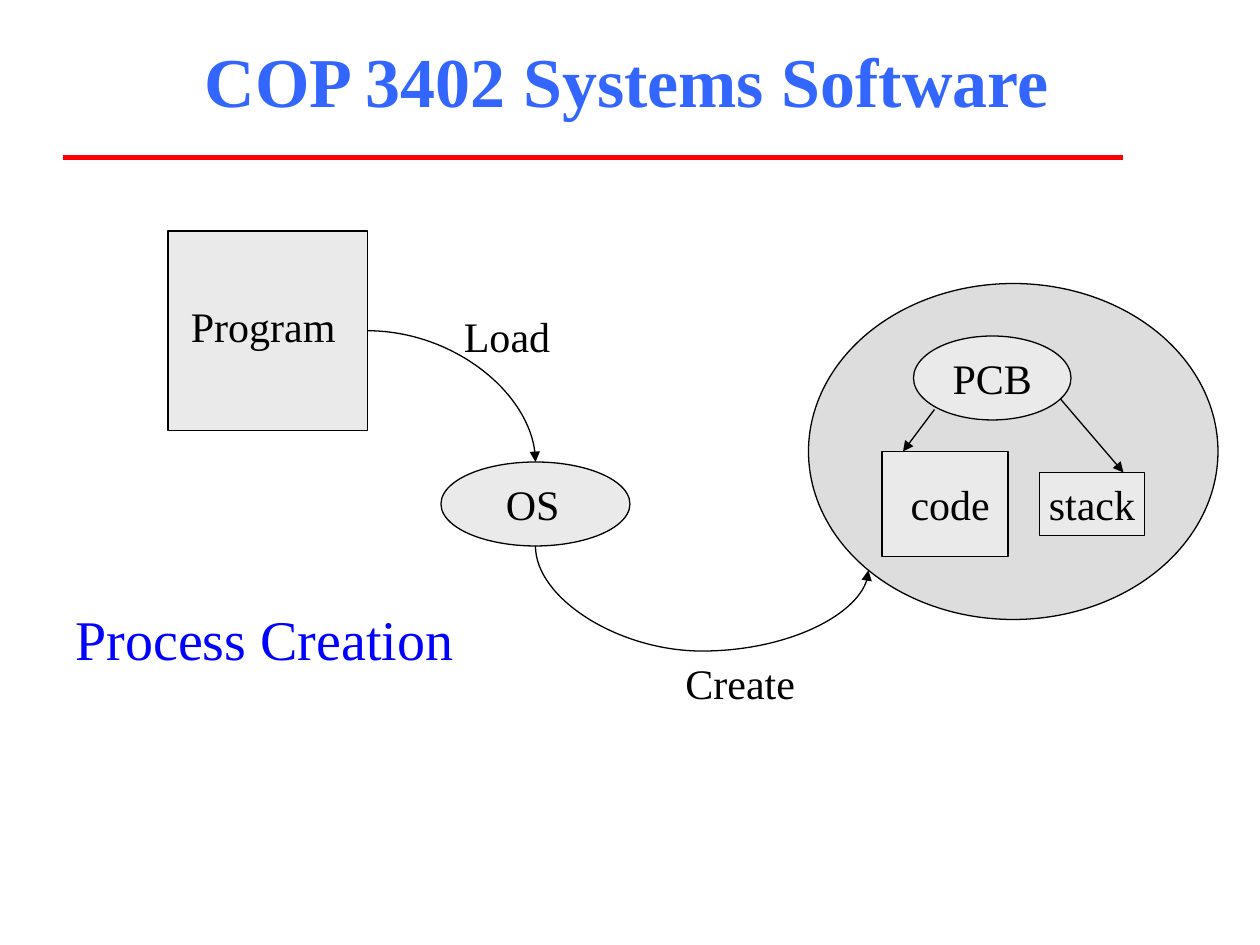
from pptx import Presentation
from pptx.dml.color import RGBColor
from pptx.enum.shapes import MSO_CONNECTOR as Link, MSO_SHAPE as Kind
from pptx.enum.text import MSO_ANCHOR as Anchor, PP_ALIGN as Align
from pptx.oxml.ns import qn
from pptx.util import Pt
from lxml.etree import SubElement

BLACK = RGBColor(0x00, 0x00, 0x00)
PALE = RGBColor(0xEA, 0xEA, 0xEA)
GREY = RGBColor(0xDD, 0xDD, 0xDD)
RED = RGBColor(0xFF, 0x00, 0x00)
BLUE = RGBColor(0x00, 0x00, 0xFF)
SKY = RGBColor(0x33, 0x66, 0xFF)


class Board:
    font = "Times New Roman"
    size = 24
    width = 0.75

    def __init__(self, slide):
        self.shapes = slide.shapes

    def label(self, frame, text, size=size, color=BLACK, bold=False,
              align=Align.LEFT, wrap=True):
        frame.word_wrap = wrap
        para = frame.paragraphs[0]
        para.text = text
        para.alignment = align
        font = para.font
        font.name, font.size, font.bold = self.font, Pt(size), bold
        font.color.rgb = color

    def text(self, box, text, **style):
        shape = self.shapes.add_textbox(*map(Pt, box))
        self.label(shape.text_frame, text, **style)

    def shape(self, kind, box, fill=PALE, text=None):
        shape = self.shapes.add_shape(kind, *map(Pt, box))
        shape.shadow.inherit = False
        shape.fill.solid()
        shape.fill.fore_color.rgb = fill
        shape.line.color.rgb = BLACK
        shape.line.width = Pt(self.width)
        if text:
            shape.text_frame.vertical_anchor = Anchor.MIDDLE
            self.label(shape.text_frame, text, align=Align.CENTER, wrap=False)

    def line(self, start, end, color=BLACK, width=width, head=True,
             kind=Link.STRAIGHT):
        link = self.shapes.add_connector(kind, *map(Pt, (*start, *end)))
        link.line.color.rgb = color
        link.line.width = Pt(width)
        props = link._element.spPr
        if head:
            SubElement(props.find(qn("a:ln")), qn("a:tailEnd"), type="triangle")
        SubElement(props, qn("a:effectLst"))
        return props

    def bend(self, start, end):
        """Quarter curve that leaves sideways and arrives from above."""
        props = self.line(start, end, kind=Link.CURVE)
        props.find(qn("a:prstGeom")).set("prst", "curvedConnector2")

    def swing(self, start, end, low):
        """Curve that drops from start to the level low, then rises to end."""
        (x1, y1), (x2, y2) = start, end
        midx, midy = (x1 + x2) / 2, (y1 + y2) / 2
        # Laid out upright and mirrored, then turned by 270 degrees
        dx, dy = (y2 - y1) / 2, (x2 - x1) / 2
        props = self.line((midx + dx, midy - dy), (midx - dx, midy + dy),
                          kind=Link.CURVE)
        props.find(qn("a:xfrm")).set("rot", str(270 * 60000))
        geom = props.find(qn("a:prstGeom"))
        guides = geom.find(qn("a:avLst"))
        if guides is None:
            guides = SubElement(geom, qn("a:avLst"))
        ratio = round((low - y1) / (y2 - y1) * 100000)
        SubElement(guides, qn("a:gd"), name="adj1", fmla=f"val {ratio}")


def main():
    deck = Presentation()
    deck.slide_width, deck.slide_height = Pt(720), Pt(540)
    board = Board(deck.slides.add_slide(deck.slide_layouts[6]))

    # Program, operating system and process
    board.shape(Kind.RECTANGLE, (96, 132, 114, 114))
    board.shape(Kind.OVAL, (252, 264, 108, 48))
    board.shape(Kind.OVAL, (462, 162, 234, 192), GREY)

    # Parts of the process
    board.shape(Kind.OVAL, (522, 192, 90, 48), text="PCB")
    board.shape(Kind.RECTANGLE, (504, 258, 72, 60))
    board.shape(Kind.RECTANGLE, (594, 270, 60, 36), text="stack")
    board.line((534, 234), (516, 258))
    board.line((606, 228), (642, 270))

    # Labels
    board.text((102, 168, 102, 36), "Program")
    board.text((282, 270, 54, 36), "OS")
    board.text((510, 270, 66, 36), "code", align=Align.CENTER)
    board.text((258, 174, 78, 36), "Load")

    # Load and create steps
    board.bend((210, 189), (306, 264))
    board.swing((306, 312), (496.25, 325.88), 372)
    board.text((360, 372, 132, 36), "Create ", align=Align.CENTER)

    # Headings
    board.text((36, 342, 264, 45), "Process Creation", size=32, color=BLUE)
    board.line((36, 90), (642, 90), RED, 3, head=False)
    board.text((108, 18, 500, 55), "COP 3402 Systems Software", size=40,
               color=SKY, bold=True, align=Align.CENTER, wrap=False)

    deck.save("out.pptx")


if __name__ == "__main__":
    main()
